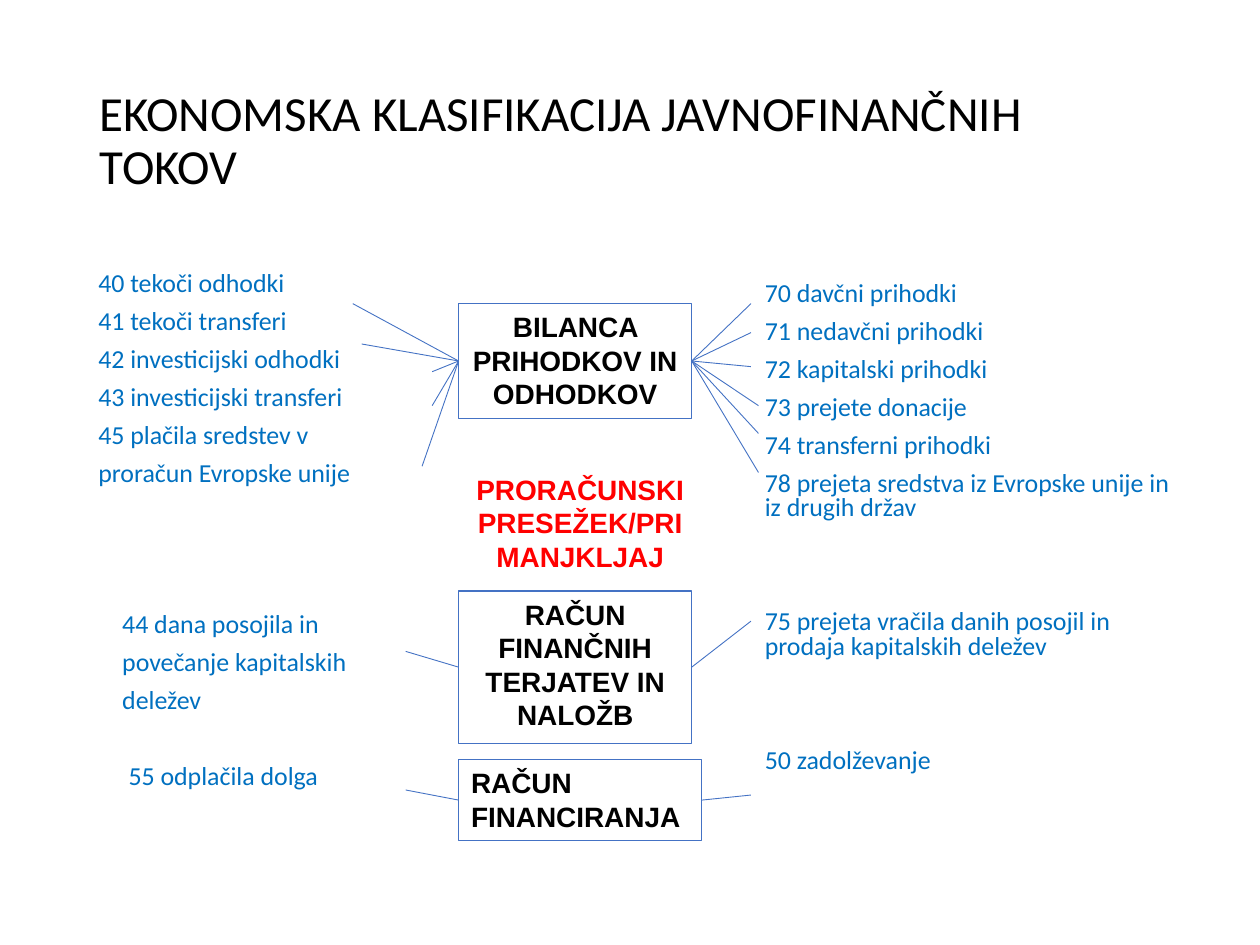
from lxml.etree import SubElement
from pptx import Presentation
from pptx.dml.color import RGBColor
from pptx.enum.shapes import MSO_CONNECTOR, MSO_SHAPE
from pptx.enum.text import MSO_ANCHOR, MSO_AUTO_SIZE, PP_ALIGN
from pptx.oxml.ns import qn
from pptx.util import Inches, Pt

BLACK, RED, BLUE, LINE = "000000", "FF0000", "0070C0", "4472C4"
LIST_SIZE, GAP, PITCH = 14.8, 7.5, 21.7  # points

TITLE = "EKONOMSKA KLASIFIKACIJA JAVNOFINANČNIH TOKOV"

# Lists: (text, skipped lines above, indent in inches)
EXPENDITURE = [
    ("40 tekoči odhodki", 0, 0),
    ("41 tekoči transferi", 0, 0),
    ("42 investicijski odhodki", 0, 0),
    ("43 investicijski transferi", 0, 0),
    ("45 plačila sredstev v", 0, 0),
    ("proračun Evropske unije", 0, 0),
    ("44 dana posojila in", 3, 0.19),
    ("povečanje kapitalskih", 0, 0.19),
    ("deležev", 0, 0.19),
    ("55 odplačila dolga", 1, 0.24),
]
REVENUE = [
    ("70 davčni prihodki", 0, 0),
    ("71 nedavčni prihodki", 0, 0),
    ("72 kapitalski prihodki", 0, 0),
    ("73 prejete donacije", 0, 0),
    ("74 transferni prihodki", 0, 0),
    ("78 prejeta sredstva iz Evropske unije in iz drugih držav", 0, 0),
    ("75 prejeta vračila danih posojil in prodaja kapitalskih deležev", 2, 0),
    ("50 zadolževanje", 2, 0),
]

# Accounts: text, (left, top, width, height), alignment, line ends left and right
ACCOUNTS = [
    ("BILANCA PRIHODKOV IN ODHODKOV", (3.64, 2.41, 1.85, 0.91), PP_ALIGN.CENTER,
     [(2.8, 2.41), (2.87, 2.73), (3.43, 2.95), (3.43, 3.22), (3.35, 3.7)],
     [(5.96, 2.41), (5.96, 2.64), (5.96, 2.91), (6.02, 3.22), (6.02, 3.44), (6.02, 3.75)]),
    ("RAČUN FINANČNIH TERJATEV IN NALOŽB", (3.64, 4.69, 1.85, 1.21), PP_ALIGN.CENTER,
     [(3.22, 5.17)], [(5.96, 4.93)]),
    ("RAČUN FINANCIRANJA", (3.64, 6.03, 1.93, 0.64), PP_ALIGN.LEFT,
     [(3.22, 6.27)], [(5.96, 6.31)]),
]
BALANCE = ("PRORAČUNSKI PRESEŽEK/PRIMANJKLJAJ", (3.64, 3.7, 1.93, 0.91))


def rgb(color):
    return RGBColor.from_string(color)


def add_text(p, text, font, size, color, bold=False):
    r = p.add_run()
    r.text = text
    r.font.name, r.font.size, r.font.bold = font, Pt(size), bold
    r.font.color.rgb = rgb(color)


def set_frame(sp, anchor):
    tf = sp.text_frame
    tf.word_wrap = True
    tf.auto_size = MSO_AUTO_SIZE.NONE
    tf.vertical_anchor = anchor
    return tf


def place(sp, box):
    sp.left, sp.top, sp.width, sp.height = map(Inches, box)


def fill_list(sp, box, items):
    place(sp, box)
    tf = set_frame(sp, MSO_ANCHOR.TOP)
    for i, (text, skipped, indent) in enumerate(items):
        p = tf.add_paragraph() if i else tf.paragraphs[0]
        p.line_spacing = 0.8
        p.space_before = Pt(GAP + skipped * PITCH)
        pPr = p._p.get_or_add_pPr()
        pPr.set("marL", str(Inches(indent)))
        pPr.set("indent", "0")
        SubElement(pPr, qn("a:buNone"))
        add_text(p, text, "Calibri", LIST_SIZE, BLUE)


def add_label(sp, text, color, align):
    p = set_frame(sp, MSO_ANCHOR.TOP).paragraphs[0]
    p.alignment = align
    add_text(p, text, "Arial", 16, color, bold=True)


def add_line(s, start, end):
    cn = s.shapes.add_connector(MSO_CONNECTOR.STRAIGHT, *map(Inches, start + end))
    cn.line.color.rgb = rgb(LINE)
    cn.line.width = Pt(0.5)
    SubElement(cn._element.spPr, qn("a:effectLst"))


def main():
    prs = Presentation()
    prs.slide_width, prs.slide_height = Inches(10), Inches(7.5)
    s = prs.slides.add_slide(prs.slide_layouts[3])
    title, left, right = list(s.placeholders)[:3]

    # Title
    place(title, (0.69, 0.4, 8.62, 1.45))
    p = set_frame(title, MSO_ANCHOR.MIDDLE).paragraphs[0]
    p.alignment, p.line_spacing = PP_ALIGN.LEFT, 0.9
    add_text(p, TITLE, "Calibri", 28, BLACK)

    # Expenditure and revenue lists
    fill_list(left, (0.68, 2.11, 3.61, 4.5), EXPENDITURE)
    fill_list(right, (5.97, 2.19, 3.52, 4.57), REVENUE)

    # Account boxes with lines from the middle of each side
    for text, box, align, left_ends, right_ends in ACCOUNTS:
        sp = s.shapes.add_shape(MSO_SHAPE.RECTANGLE, *map(Inches, box))
        sp.shadow.inherit = False
        sp.fill.background()
        sp.line.color.rgb = rgb(LINE)
        sp.line.width = Pt(0.75)
        add_label(sp, text, BLACK, align)
        x, y, w, h = box
        for hub_x, ends in ((x, left_ends), (x + w, right_ends)):
            for end in ends:
                add_line(s, (hub_x, y + h / 2), end)

    # Budget balance
    text, box = BALANCE
    add_label(s.shapes.add_textbox(*map(Inches, box)), text, RED, PP_ALIGN.CENTER)

    prs.save("out.pptx")


if __name__ == "__main__":
    main()
